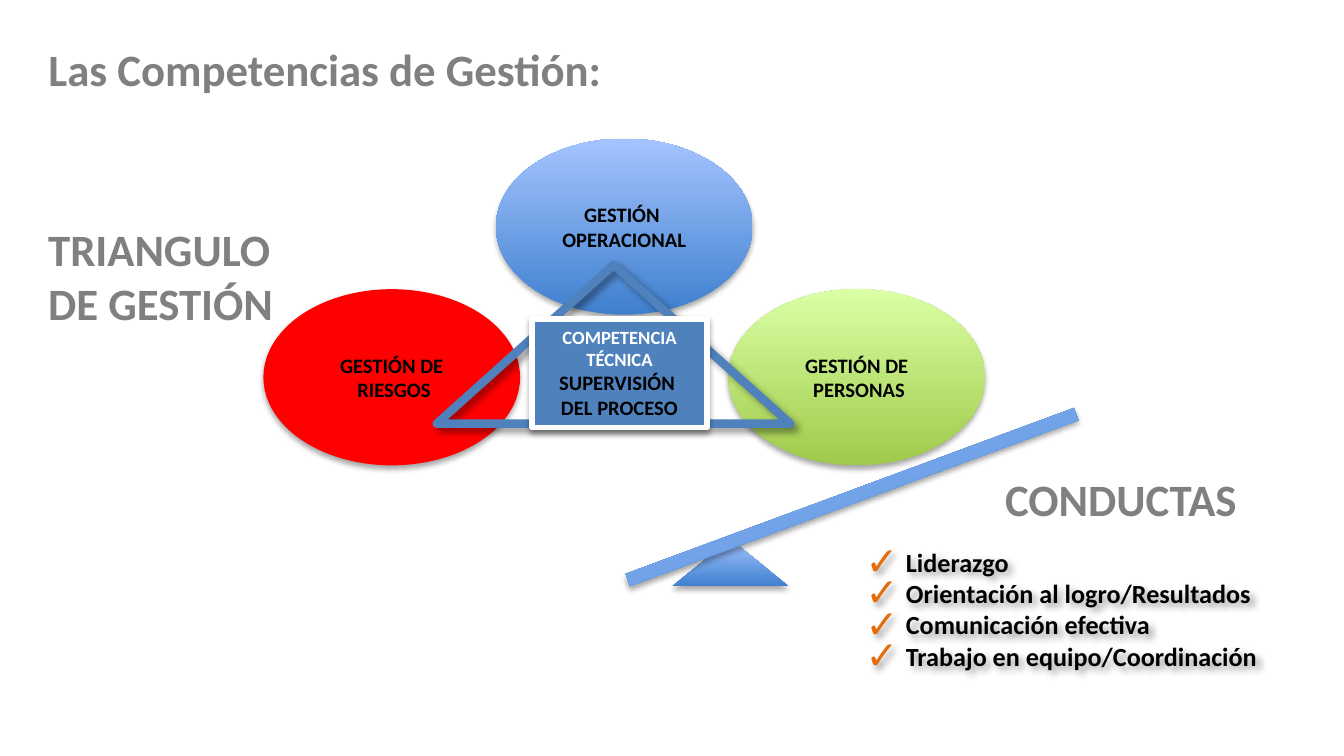
import pptx
import pptx.util
import pptx.dml.color
import pptx.enum.shapes
import pptx.enum.text
import pptx.oxml
import pptx.oxml.ns
from lxml import etree

Inches, Pt = pptx.util.Inches, pptx.util.Pt
Kind = pptx.enum.shapes.MSO_SHAPE
Align = pptx.enum.text.PP_ALIGN
Anchor = pptx.enum.text.MSO_ANCHOR
qn = pptx.oxml.ns.qn

THEME = {
    "font": "Calibri",
    "head": 24, "list": 14, "label": 11, "small": 10,
    "grey": "808080", "black": "000000", "white": "FFFFFF",
    "steel": "4F81BD", "check": "E46C0A", "red": "FF0000",
    "blue": ("3F80CE", "A4C4FF"), "green": ("A0CA4A", "DAFFA5"),
}
SOFT = (35, 3.1, 1.8, 90)
DEEP = (40, 4, 3, 45)
FIRM = (38, 3.1, 1.6, 90)

TITLE = "Las Competencias de Gestión:"
HEADS = [
    ("TRIANGULO\nDE GESTIÓN", (2.6, 28.47, 27.6, 16.19)),
    ("CONDUCTAS", (73.8, 61.57, 22.8, 8.9)),
]
SKILLS = [
    "Liderazgo",
    "Orientación al logro/Resultados",
    "Comunicación efectiva",
    "Trabajo en equipo/Coordinación",
]
OVALS = [
    ("GESTIÓN \nOPERACIONAL", 1, 0, "blue"),
    ("GESTIÓN DE\n PERSONAS", 2, 1, "green"),
    ("GESTIÓN DE\n RIESGOS", 0, 1, "red"),
]
CORE = "COMPETENCIA\nTÉCNICA\nSUPERVISIÓN \nDEL PROCESO"
CORE_STYLE = [("small", "white")] * 2 + [("label", "black")] * 2

WIDE = 10
HIGH = WIDE * 9 / 16
OVAL_X, OVAL_Y, STEP_X, STEP_Y = 19.6, 18.33, 17.3, 19.93
OVAL_W, OVAL_H = 19.1, 23.31

deck = pptx.Presentation()
deck.slide_width, deck.slide_height = Inches(WIDE), Inches(HIGH)
slide = deck.slides.add_slide(deck.slide_layouts[1])


def color(name):
    return pptx.dml.color.RGBColor.from_string(name)


def place(box):
    x, y, w, h = box
    return [Inches(v * side / 100)
            for v, side in ((x, WIDE), (y, HIGH), (w, WIDE), (h, HIGH))]


def move(shape, box):
    shape.left, shape.top, shape.width, shape.height = place(box)


def shade(shape, alpha, blur, dist, angle):
    shape.shadow.inherit = False
    effect = shape._element.spPr.find(qn("a:effectLst"))
    glow = etree.SubElement(effect, qn("a:outerShdw"), blurRad=str(Pt(blur)),
                            dist=str(Pt(dist)), dir=str(angle * 60000),
                            algn="ctr", rotWithShape="0")
    tint = etree.SubElement(glow, qn("a:srgbClr"), val=THEME["black"])
    etree.SubElement(tint, qn("a:alpha"), val=str(alpha * 1000))


def paint(fill, name):
    tone = THEME[name]
    if isinstance(tone, str):
        fill.solid()
        fill.fore_color.rgb = color(tone)
        return
    fill.gradient()
    fill.gradient_angle = 90
    for stop, part in zip(fill.gradient_stops, tone):
        stop.color.rgb = color(part)


def draw(kind, box, fill=None, shadow=SOFT, line=None):
    shape = slide.shapes.add_shape(kind, *place(box))
    if fill:
        paint(shape.fill, fill)
    else:
        shape.fill.background()
    if line:
        name, width = line
        shape.line.color.rgb = color(THEME[name])
        shape.line.width = Pt(width)
    else:
        shape.line.fill.background()
    shade(shape, *shadow)
    return shape


def style(para, size, tone, align):
    para.alignment = align
    para.space_before = Pt(0)
    for run in para.runs:
        font = run.font
        font.name, font.bold = THEME["font"], True
        font.size = Pt(THEME[size])
        font.color.rgb = color(THEME[tone])


def write(shape, text, looks, align=Align.LEFT, anchor=Anchor.TOP):
    frame = shape.text_frame
    frame.text = text
    frame.word_wrap = True
    frame.auto_size = pptx.enum.text.MSO_AUTO_SIZE.NONE
    frame.vertical_anchor = anchor
    for para, look in zip(frame.paragraphs, looks):
        style(para, *look, align)


def check(para):
    props = para._p.get_or_add_pPr()
    props.set("marL", str(Inches(0.3)))
    props.set("indent", str(-Inches(0.3)))
    tint = etree.SubElement(props, qn("a:buClr"))
    etree.SubElement(tint, qn("a:srgbClr"), val=THEME["check"])
    etree.SubElement(props, qn("a:buSzPct"), val="150000")
    etree.SubElement(props, qn("a:buChar"), char="✓")


for text, col, row, fill in OVALS:
    oval = draw(Kind.OVAL, (OVAL_X + col * STEP_X, OVAL_Y + row * STEP_Y,
                            OVAL_W, OVAL_H), fill)
    write(oval, text, [("label", "black")] * 2, Align.CENTER, Anchor.MIDDLE)

frame = draw(Kind.ISOSCELES_TRIANGLE, (32.5, 35.05, 26.3, 21),
             shadow=DEEP, line=("steel", 4.5))
etree.SubElement(frame.line._get_or_add_ln(), qn("a:round"))

core = draw(Kind.RECTANGLE, (39.6, 42.17, 13, 14.41), "steel", FIRM,
            ("white", 3))
write(core, CORE, CORE_STYLE, Align.CENTER)

draw(Kind.ISOSCELES_TRIANGLE, (50, 71.35, 8.7, 6.23), "blue")
beam = draw(Kind.MATH_MINUS, (39.2, 62.1, 48.4, 7.3), "blue")
beam.rotation = 339.7

for text, box in HEADS:
    head = slide.shapes.add_textbox(*place(box))
    write(head, text, [("head", "grey")] * 2)

title, body = slide.placeholders
move(title, (2.6, 4.63, 87.6, 8.9))
write(title, TITLE, [("head", "grey")])

move(body, (63.4, 71.35, 36, 18.51))
write(body, "\n".join(SKILLS), [("list", "black")] * len(SKILLS))
for para in body.text_frame.paragraphs:
    check(para)
shade(body, *DEEP)

deck.save("out.pptx")
